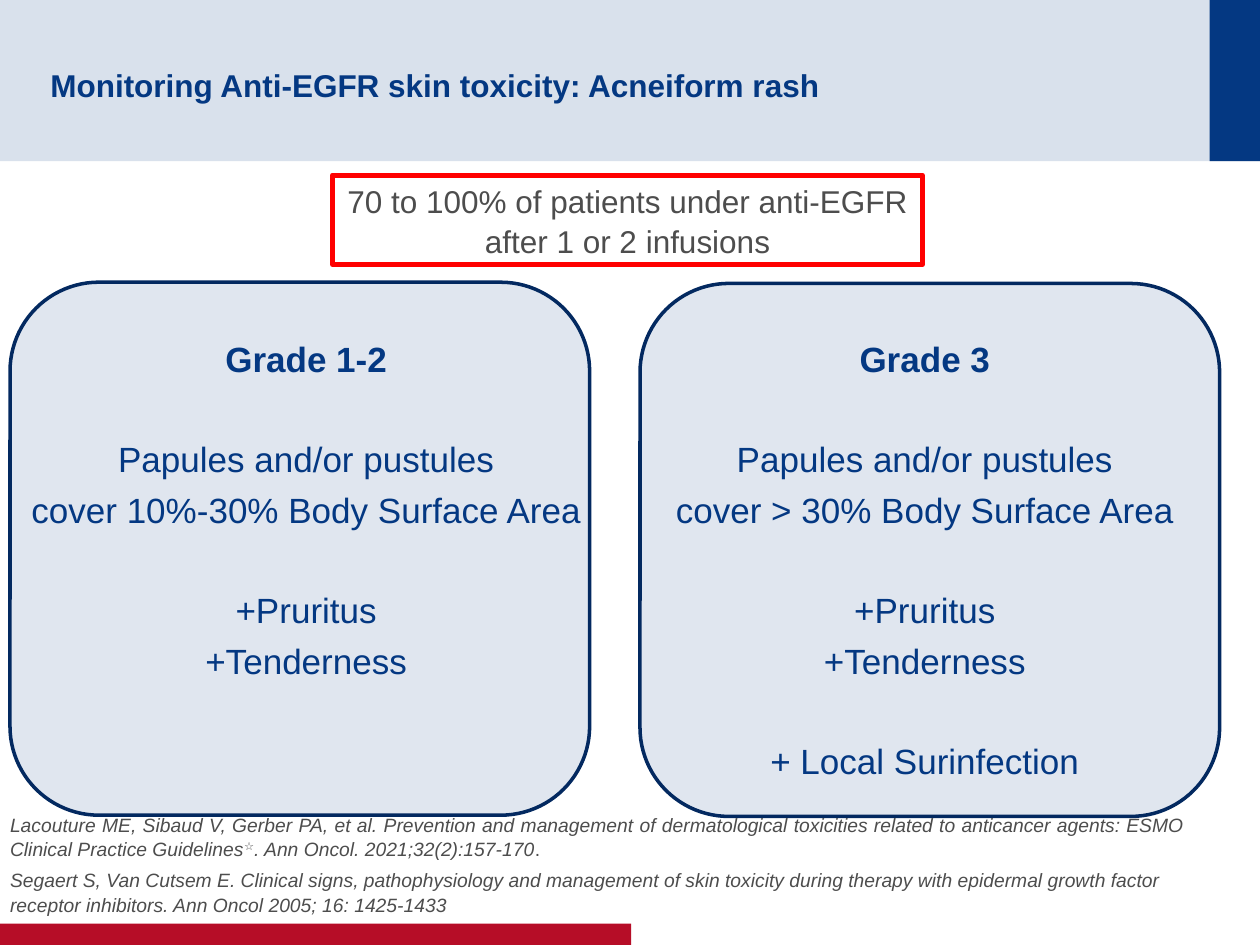
from pptx import Presentation
from pptx.dml.color import RGBColor
from pptx.enum.shapes import MSO_SHAPE
from pptx.enum.text import MSO_ANCHOR, PP_ALIGN
from pptx.util import Inches, Pt

RECT, ROUND = MSO_SHAPE.RECTANGLE, MSO_SHAPE.ROUNDED_RECTANGLE
TOP, MID, LOW = MSO_ANCHOR.TOP, MSO_ANCHOR.MIDDLE, MSO_ANCHOR.BOTTOM
LEFT, MIDDLE, JUST = PP_ALIGN.LEFT, PP_ALIGN.CENTER, PP_ALIGN.JUSTIFY

# Content
BLUE, NAVY, GREY = "043882", "032960", "4D4D4D"
PALE, PANEL, RED, ALERT = "D9E1EC", "E0E6EF", "B60D27", "FF0000"

TITLE = "Monitoring Anti-EGFR skin toxicity: Acneiform rash"
CLAIM = ["70 to 100% of patients under anti-EGFR", "after 1 or 2 infusions"]

# Each grade: panel left, panel top, text left, heading, groups of lines
GRADES = [
    (5.08, 2.25, 5.08, "Grade 3", [
        ["Papules and/or pustules", "cover > 30% Body Surface Area"],
        ["+Pruritus", "+Tenderness"],
        ["+ Local Surinfection"],
    ]),
    (0.08, 2.24, 0.17, "Grade 1-2", [
        ["Papules and/or pustules", "cover 10%-30% Body Surface Area"],
        ["+Pruritus", "+Tenderness"],
    ]),
]

# Each source: alignment, runs of (text, italic, superscript)
SOURCES = [
    (JUST, [
        ("Lacouture ME, Sibaud V, Gerber PA, et al. Prevention and management of "
         "dermatological toxicities related to anticancer agents: ESMO Clinical "
         "Practice Guidelines", True, False),
        ("☆", True, True),
        (". Ann Oncol. 2021;32(2):157-170", True, False),
        (".", False, False),
    ]),
    (LEFT, [
        ("Segaert S, Van Cutsem E. Clinical signs, pathophysiology and management "
         "of skin toxicity during therapy with epidermal growth factor receptor "
         "inhibitors. Ann Oncol 2005; 16: 1425-1433", True, False),
    ]),
]

GAP = 28  # points: one empty line between groups

prs = Presentation()
prs.slide_width, prs.slide_height = Inches(10), Inches(7.5)
slide = prs.slides.add_slide(prs.slide_layouts[6])


def color(hex):
    return RGBColor.from_string(hex)


def add_box(kind, place, fill=None, line=None, width=0):
    box = slide.shapes.add_shape(kind, *map(Inches, place))
    box.shadow.inherit = False
    if fill:
        box.fill.solid()
        box.fill.fore_color.rgb = color(fill)
    else:
        box.fill.background()
    if line:
        box.line.color.rgb = color(line)
        box.line.width = Pt(width)
    else:
        box.line.fill.background()
    return box


def set_frame(shape, anchor, side=0, top=0.05, low=0.05):
    frame = shape.text_frame
    frame.word_wrap = True
    frame.vertical_anchor = anchor
    frame.margin_left = frame.margin_right = Inches(side)
    frame.margin_top, frame.margin_bottom = Inches(top), Inches(low)
    return frame


def add_frame(place, anchor, **insets):
    return set_frame(slide.shapes.add_textbox(*map(Inches, place)), anchor, **insets)


def add_line(frame, text, size, hue, align=MIDDLE, bold=False, before=0, after=0):
    first = frame.paragraphs[0]
    para = frame.add_paragraph() if first.runs else first
    para.alignment = align
    para.line_spacing = 1.05
    para.space_before, para.space_after = Pt(before), Pt(after)
    font = para.font
    font.name, font.size, font.bold = "Arial", Pt(size), bold
    font.color.rgb = color(hue)
    if text:
        para.add_run().text = text
    return para


# Header and footer bands
add_box(RECT, (0, 0, 10, 1.28), PALE)
add_box(RECT, (9.6, 0, 0.4, 1.28), BLUE)
add_box(RECT, (0, 7.33, 5.01, 0.17), RED)

# Title
frame = add_frame((0.4, 0.2, 9.01, 0.88), MID, low=0)
add_line(frame, TITLE, 18, BLUE, LEFT, bold=True)

# Grade panels
for left, top, start, head, groups in GRADES:
    add_box(ROUND, (left, top, 4.6, 4.23), PANEL, NAVY, 2)
    frame = add_frame((start, 2.61, 4.52, 3.58), TOP)
    add_line(frame, head, 20, BLUE, bold=True, after=4)
    for group in groups:
        for i, text in enumerate(group):
            add_line(frame, text, 20, BLUE, before=0 if i else GAP, after=4)

# Sources
frame = add_frame((0.08, 6.74, 9.33, 0.53), LOW, top=0, low=0)
for align, parts in SOURCES:
    para = add_line(frame, "", 11, GREY, align, after=4)
    for text, slant, raised in parts:
        run = para.add_run()
        run.text = text
        run.font.italic = slant
        if raised:
            run.font._element.set("baseline", "30000")

# Key claim
box = add_box(RECT, (2.64, 1.39, 4.68, 0.71), line=ALERT, width=3)
frame = set_frame(box, MID, side=0.1)
for text in CLAIM:
    add_line(frame, text, 18, GREY)

prs.save("out.pptx")
